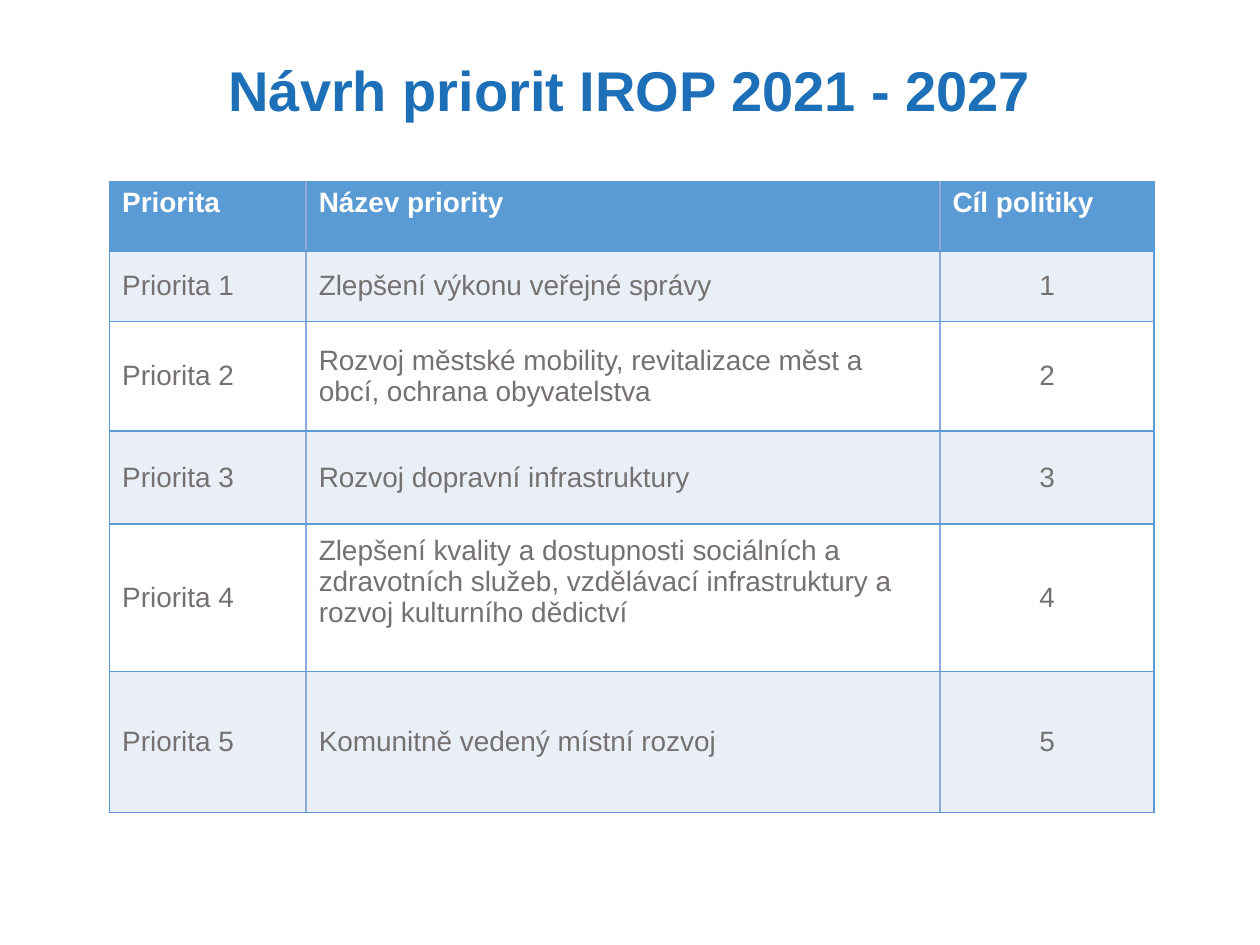
import pptx
import pptx.dml.color
import pptx.enum.text
import pptx.oxml
import pptx.oxml.ns
import pptx.util

ALIGN = pptx.enum.text.PP_ALIGN
ANCHOR = pptx.enum.text.MSO_ANCHOR
COLOURS = {
    "title": "1D70B8",
    "header": "5B9BD5",
    "divider": "8FAADC",
    "band": "EAEFF7",
    "plain": "FFFFFF",
    "body": "767171",
}
SLIDE_WIDTH, SLIDE_HEIGHT = pptx.util.Inches(10), pptx.util.Inches(7.5)
TITLE_BOX = (0.122, 0.052, 0.756, 0.085)
TABLE_ORIGIN = (0.087, 0.192)
COLUMN_WIDTHS = (1.56, 5.03, 1.7)
ROW_HEIGHTS = (0.55, 0.56, 0.87, 0.74, 1.17, 1.12)
HEADINGS = ("Priorita", "Název priority", "Cíl politiky")
PRIORITIES = (
    "Zlepšení výkonu veřejné správy",
    "Rozvoj městské mobility, revitalizace měst a obcí, ochrana obyvatelstva",
    "Rozvoj dopravní infrastruktury",
    "Zlepšení kvality a dostupnosti sociálních a zdravotních služeb, "
    "vzdělávací infrastruktury a\nrozvoj kulturního dědictví",
    "Komunitně vedený místní rozvoj",
)
FORMATS = {
    "title": {"name": "Arial", "size": pptx.util.Pt(32), "bold": True},
    "header": {"name": "Arial", "size": pptx.util.Pt(16), "bold": True},
    "body": {"name": "Arial", "size": pptx.util.Pt(16), "bold": False},
}


def colour(key):
    return pptx.dml.color.RGBColor.from_string(COLOURS[key])


def write_text(text_frame, text, style, colour_key, alignment):
    text_frame.text = text
    for paragraph in text_frame.paragraphs:
        paragraph.alignment = alignment
        for run in paragraph.runs:
            for attribute, value in FORMATS[style].items():
                setattr(run.font, attribute, value)
            run.font.color.rgb = colour(colour_key)


def add_title(slide, text):
    title = slide.shapes.title
    left, top, width, height = TITLE_BOX
    box = {
        "left": int(SLIDE_WIDTH * left),
        "top": int(SLIDE_HEIGHT * top),
        "width": int(SLIDE_WIDTH * width),
        "height": int(SLIDE_HEIGHT * height),
    }
    for attribute, value in box.items():
        setattr(title, attribute, value)
    title.text_frame.auto_size = pptx.enum.text.MSO_AUTO_SIZE.SHAPE_TO_FIT_TEXT
    title.text_frame.vertical_anchor = ANCHOR.MIDDLE
    write_text(title.text_frame, text, "title", "title", ALIGN.CENTER)


def set_borders(cell, border_colours):
    properties = cell._tc.get_or_add_tcPr()
    namespace = pptx.oxml.ns.nsdecls("a")
    for position, (side, key) in enumerate(border_colours.items()):
        line = pptx.oxml.parse_xml(
            f'<a:ln{side} {namespace} w="12700"><a:solidFill>'
            f'<a:srgbClr val="{COLOURS[key]}"/></a:solidFill></a:ln{side}>'
        )
        properties.insert(position, line)


def format_cell(cell, text, row, column):
    is_header = row == 0
    last_column = len(COLUMN_WIDTHS) - 1
    centred = column == last_column and not is_header
    write_text(
        cell.text_frame,
        text,
        "header" if is_header else "body",
        "plain" if is_header else "body",
        ALIGN.CENTER if centred else ALIGN.LEFT,
    )
    cell.vertical_anchor = ANCHOR.TOP if is_header else ANCHOR.MIDDLE
    if "\n" in text:
        cell.margin_bottom = pptx.util.Inches(0.3)
    cell.fill.solid()
    fill_key = "header" if is_header else ("plain", "band")[row % 2]
    cell.fill.fore_color.rgb = colour(fill_key)
    set_borders(cell, {
        "L": "header" if column == 0 else "divider",
        "R": "header" if column == last_column else "divider",
        "T": "header",
        "B": "header",
    })


def add_priority_table(slide):
    rows = [HEADINGS] + [
        (f"Priorita {number}", name, str(number))
        for number, name in enumerate(PRIORITIES, 1)
    ]
    left, top = TABLE_ORIGIN
    table = slide.shapes.add_table(
        len(rows), len(HEADINGS),
        int(SLIDE_WIDTH * left), int(SLIDE_HEIGHT * top),
        pptx.util.Inches(sum(COLUMN_WIDTHS)), pptx.util.Inches(sum(ROW_HEIGHTS)),
    ).table
    for column, width in zip(table.columns, COLUMN_WIDTHS):
        column.width = pptx.util.Inches(width)
    for row, height in zip(table.rows, ROW_HEIGHTS):
        row.height = pptx.util.Inches(height)
    for row, texts in enumerate(rows):
        for column, text in enumerate(texts):
            format_cell(table.cell(row, column), text, row, column)


def main():
    presentation = pptx.Presentation()
    presentation.slide_width = SLIDE_WIDTH
    presentation.slide_height = SLIDE_HEIGHT
    slide = presentation.slides.add_slide(presentation.slide_layouts[5])
    add_title(slide, "Návrh priorit IROP 2021 - 2027")
    add_priority_table(slide)
    presentation.save("out.pptx")


if __name__ == "__main__":
    main()
